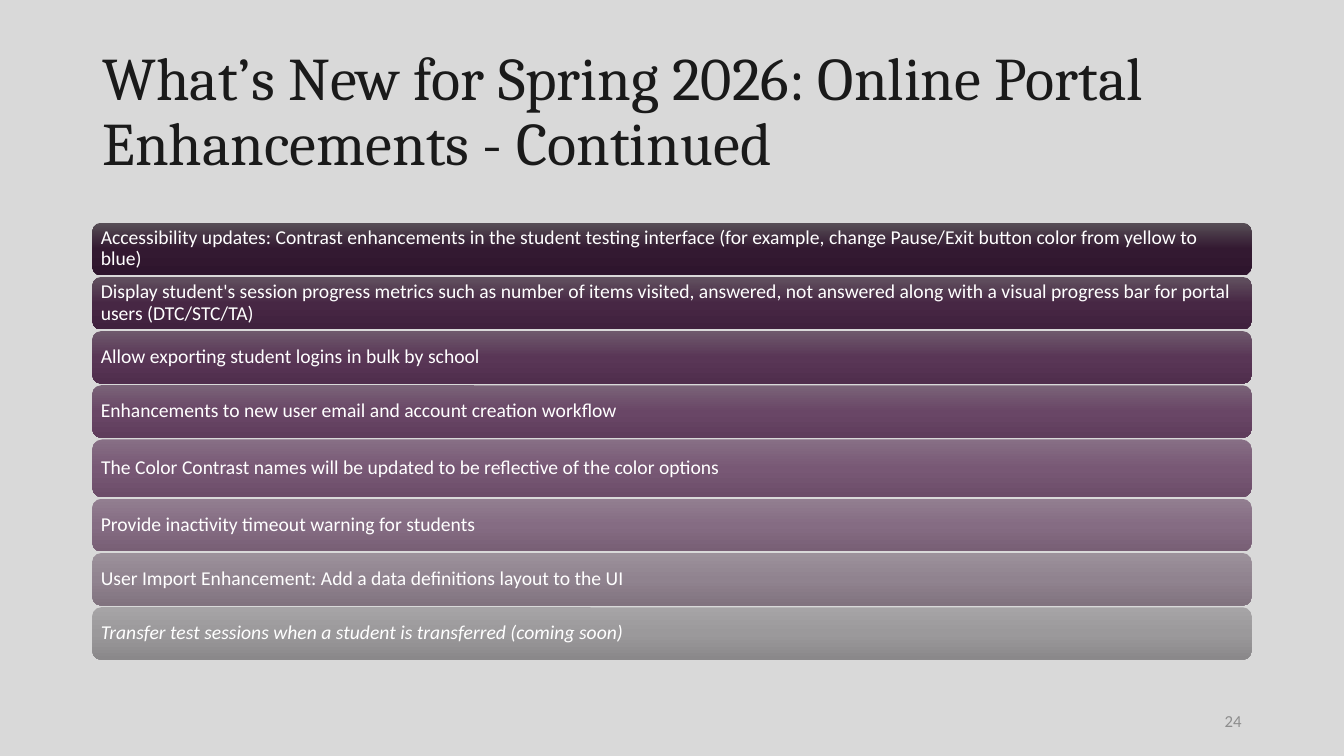
import copy
from dataclasses import dataclass

import pptx
import pptx.dml.color
import pptx.enum.shapes
import pptx.enum.text
import pptx.util

Pt = pptx.util.Pt
Align = pptx.enum.text.PP_ALIGN
Anchor = pptx.enum.text.MSO_ANCHOR


@dataclass(frozen=True)
class Theme:
    background: str = "D9D9D9"
    title_color: str = "1A1A1A"
    item_color: str = "FFFFFF"
    number_color: str = "8D8D8D"
    title_font: str = "Cambria"
    body_font: str = "Calibri"
    title_size: float = 43.2
    item_size: float = 14
    number_size: float = 12
    # Top, middle and bottom colour of each bar
    bar_gradients: tuple = (
        ("574E56", "331931", "2E152D"),
        ("625260", "472744", "40213E"),
        ("6E596C", "593656", "502E4D"),
        ("7A6378", "694666", "5F3D5C"),
        ("876F85", "785875", "6C4D69"),
        ("927E90", "856C83", "785F75"),
        ("9C919B", "90838F", "81737F"),
        ("A6A4A6", "9B999B", "8A888A"),
    )


THEME = Theme()
LEFT, WIDTH = 66, 828
BAR_HEIGHT, TALL_BAR_HEIGHT, BAR_GAP = 37.5, 41.25, 1.2
COLOR_NAMES_UPDATE = "The Color Contrast names will be updated to be reflective of the color options"
COMING_SOON = "Transfer test sessions when a student is transferred (coming soon)"
ENHANCEMENTS = [
    "Accessibility updates: Contrast enhancements in the student testing interface "
    "(for example, change Pause/Exit button color from yellow to blue)",
    "Display student's session progress metrics such as number of items visited, answered, "
    "not answered along with a visual progress bar for portal users (DTC/STC/TA)",
    "Allow exporting student logins in bulk by school",
    "Enhancements to new user email and account creation workflow",
    COLOR_NAMES_UPDATE,
    "Provide inactivity timeout warning for students",
    "User Import Enhancement: Add a data definitions layout to the UI",
    COMING_SOON,
]


def rgb(value):
    return pptx.dml.color.RGBColor.from_string(value)


def set_all(target, values):
    for name, value in values.items():
        setattr(target, name, value)


def write(shape, text, color, font, align=Align.LEFT, spacing=0.9, inset=None):
    frame = shape.text_frame
    frame.text = text
    set_all(frame, {"word_wrap": True, "vertical_anchor": Anchor.MIDDLE,
                    "auto_size": pptx.enum.text.MSO_AUTO_SIZE.NONE})
    if inset is not None:
        sides = ("margin_left", "margin_top", "margin_right", "margin_bottom")
        set_all(frame, dict.fromkeys(sides, Pt(inset)))
    paragraph = frame.paragraphs[0]
    set_all(paragraph, {"alignment": align, "line_spacing": spacing})
    run_font = paragraph.runs[0].font
    set_all(run_font, font)
    run_font.color.rgb = rgb(color)


def fill_gradient(fill, colors):
    fill.gradient()
    fill.gradient_angle = 270
    # The default gradient has two stops; insert one between them
    first_stop = fill._fill._gradFill.gsLst[0]
    first_stop.addnext(copy.deepcopy(first_stop))
    for stop, position, color in zip(fill.gradient_stops, (0, 0.5, 1), colors):
        stop.position = position
        stop.color.rgb = rgb(color)


def add_title(slide, left, top, width, height):
    title = slide.shapes.title
    set_all(title, {"left": Pt(left), "top": Pt(top), "width": Pt(width), "height": Pt(height)})
    write(title, "What’s New for Spring 2026: Online Portal Enhancements - Continued",
          THEME.title_color, {"name": THEME.title_font, "size": Pt(THEME.title_size)})


def add_enhancements(slide, left, top, width):
    for enhancement, colors in zip(ENHANCEMENTS, THEME.bar_gradients):
        height = TALL_BAR_HEIGHT if enhancement == COLOR_NAMES_UPDATE else BAR_HEIGHT
        bar = slide.shapes.add_shape(pptx.enum.shapes.MSO_SHAPE.ROUNDED_RECTANGLE,
                                     Pt(left), Pt(top), Pt(width), Pt(height))
        bar.shadow.inherit = False
        bar.line.fill.background()
        fill_gradient(bar.fill, colors)
        write(bar, enhancement, THEME.item_color,
              {"name": THEME.body_font, "size": Pt(THEME.item_size),
               "italic": enhancement == COMING_SOON}, inset=4.2)
        top += height + BAR_GAP


def add_page_number(slide, left, top, width, height):
    page_number = slide.shapes.add_textbox(Pt(left), Pt(top), Pt(width), Pt(height))
    write(page_number, "24", THEME.number_color,
          {"name": THEME.body_font, "size": Pt(THEME.number_size)}, Align.RIGHT, 1.0)


def main():
    presentation = pptx.Presentation()
    set_all(presentation, {"slide_width": Pt(960), "slide_height": Pt(540)})
    slide = presentation.slides.add_slide(presentation.slide_layouts[5])
    slide.background.fill.solid()
    slide.background.fill.fore_color.rgb = rgb(THEME.background)

    add_title(slide, LEFT, 28.75, WIDTH, 104.4)
    add_enhancements(slide, LEFT, 159.1, WIDTH)
    add_page_number(slide, LEFT + WIDTH - 216, 500.5, 216, 28.75)
    presentation.save("out.pptx")


if __name__ == "__main__":
    main()
